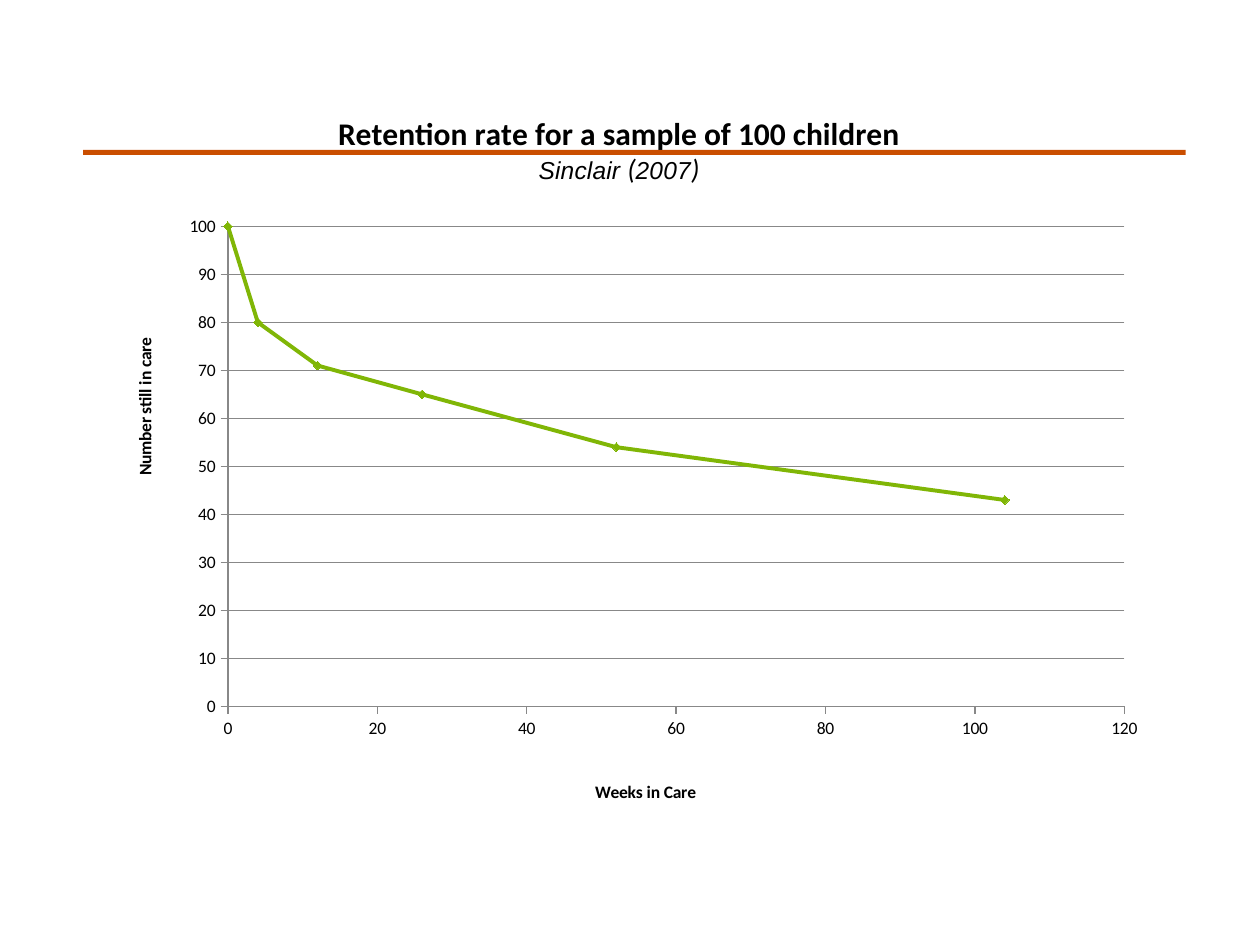
import pptx
import pptx.chart.data
import pptx.dml.color
import pptx.enum.chart
import pptx.enum.shapes
import pptx.oxml
import pptx.oxml.ns
import pptx.util

Pt = pptx.util.Pt
qn = pptx.oxml.ns.qn
COLORS = {"rule": "CA4E00", "curve": "80B606", "axis": "888888", "text": "000000"}
POINTS = [(104, 43), (52, 54), (26, 65), (12, 71), (4, 80), (0, 100)]


def rgb(name):
    return pptx.dml.color.RGBColor.from_string(COLORS[name])


def format_font(font, size, name="Calibri", bold=False, italic=False):
    font.size, font.name = Pt(size), name
    font.bold, font.italic = bold, italic
    font.color.rgb = rgb("text")


def set_layout(parent, index, x, y, w=None, h=None):
    """Place a chart part by fractions of the chart area."""
    for old in parent.findall(qn("c:layout")):
        parent.remove(old)
    target = "" if w is None else '<c:layoutTarget val="inner"/>'
    values = {"x": x, "y": y, "w": w, "h": h}
    modes = "".join(f'<c:{k}Mode val="edge"/>' for k in "xy")
    sizes = "".join(f'<c:{k} val="{v}"/>' for k, v in values.items() if v is not None)
    parent.insert(index, pptx.oxml.parse_xml(
        f'<c:layout {pptx.oxml.ns.nsdecls("c")}><c:manualLayout>'
        f'{target}{modes}{sizes}</c:manualLayout></c:layout>'))


def clear_background(chart):
    no_fill = pptx.oxml.parse_xml(
        f'<c:spPr {pptx.oxml.ns.nsdecls("c", "a")}><a:noFill/>'
        '<a:ln><a:noFill/></a:ln></c:spPr>')
    chart.element.find(qn("c:chart")).addnext(no_fill)


def add_rule(slide):
    sp = slide.shapes.add_shape(pptx.enum.shapes.MSO_SHAPE.RECTANGLE,
                                Pt(47.5), Pt(85.7), Pt(630), Pt(2.9))
    sp.shadow.inherit = False
    sp.fill.solid()
    sp.fill.fore_color.rgb = rgb("rule")
    sp.line.fill.background()


def format_chart_title(chart):
    chart.has_title = True
    tf = chart.chart_title.text_frame
    tf.text = "Retention rate for a sample of 100 children"
    format_font(tf.paragraphs[0].runs[0].font, 18, bold=True)
    p = tf.add_paragraph()
    for text, size, name in [("Sinclair ", 14, "Arial"), ("(", 16, "Calibri"),
                             ("2007", 14, "Arial"), (")", 16, "Calibri")]:
        r = p.add_run()
        r.text = text
        format_font(r.font, size, name, italic=True)
    set_layout(chart.chart_title.element, 1, 0.22, 0.04)


def format_axis(axis, title, maximum, unit, x, y):
    axis.minimum_scale, axis.maximum_scale = 0, maximum
    axis.major_unit = unit
    axis.major_tick_mark = pptx.enum.chart.XL_TICK_MARK.OUTSIDE
    axis.minor_tick_mark = pptx.enum.chart.XL_TICK_MARK.NONE
    format_font(axis.tick_labels.font, 10)
    axis.format.line.color.rgb = rgb("axis")
    axis.format.line.width = Pt(0.75)
    tf = axis.axis_title.text_frame
    tf.text = title
    format_font(tf.paragraphs[0].runs[0].font, 10, bold=True)
    set_layout(axis.axis_title.element, 1, x, y)


def format_curve(series):
    series.smooth = True
    series.format.line.color.rgb = rgb("curve")
    series.format.line.width = Pt(2.25)
    marker = series.marker
    marker.style = pptx.enum.chart.XL_MARKER_STYLE.DIAMOND
    marker.size = 5
    marker.format.fill.solid()
    marker.format.fill.fore_color.rgb = rgb("curve")
    marker.format.line.color.rgb = rgb("curve")


def add_retention_chart(slide):
    data = pptx.chart.data.XyChartData()
    series = data.add_series("Series 1")
    for weeks, children in POINTS:
        series.add_data_point(weeks, children)
    chart = slide.shapes.add_chart(
        pptx.enum.chart.XL_CHART_TYPE.XY_SCATTER_SMOOTH,
        Pt(56), Pt(44.6), Pt(613.5), Pt(444), data).chart
    format_font(chart.font, 10)
    clear_background(chart)
    chart.has_legend = False
    chart.plots[0].vary_by_categories = False
    format_chart_title(chart)
    format_axis(chart.category_axis, "Weeks in Care", 120, 20, 0.46, 0.9)
    format_axis(chart.value_axis, "Number still in care", 100, 10, 0.03, 0.33)
    chart.category_axis.has_major_gridlines = False
    chart.value_axis.has_major_gridlines = True
    grid = chart.value_axis.major_gridlines.format.line
    grid.color.rgb = rgb("axis")
    grid.width = Pt(0.75)
    format_curve(chart.plots[0].series[0])
    plot_area = chart.element.find(qn("c:chart")).find(qn("c:plotArea"))
    set_layout(plot_area, 0, 0.121, 0.191, 0.835, 0.618)


def main():
    prs = pptx.Presentation()
    prs.slide_width, prs.slide_height = Pt(720), Pt(540)
    slide = prs.slides.add_slide(prs.slide_layouts[6])
    add_rule(slide)
    add_retention_chart(slide)
    prs.save("out.pptx")


if __name__ == "__main__":
    main()
